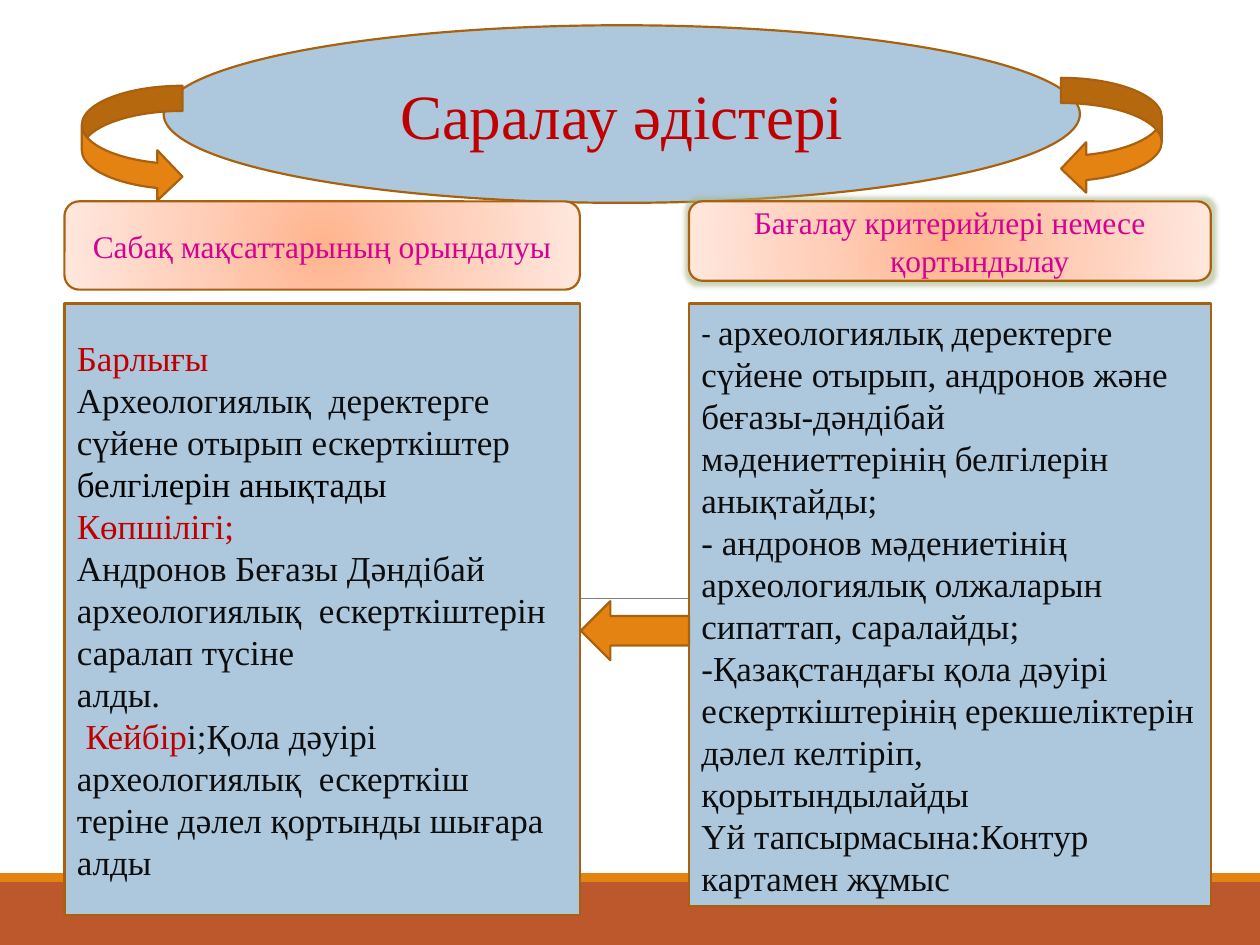
import dataclasses

import lxml.etree
import pptx
import pptx.dml.color
import pptx.enum.shapes
import pptx.enum.text
import pptx.oxml
import pptx.oxml.ns
import pptx.util

Cm = pptx.util.Cm
Pt = pptx.util.Pt
Shapes = pptx.enum.shapes.MSO_SHAPE
Align = pptx.enum.text.PP_ALIGN


@dataclasses.dataclass(frozen=True)
class Theme:
    """Colours, fonts and type sizes of the slide."""
    panel: str = "ADC8DD"
    outline: str = "A9610D"
    arrow: str = "E48312"
    band: str = "BD582C"
    rule: str = "808080"
    accent: str = "C00000"
    heading: str = "D60093"
    ink: str = "0D0D0D"
    black: str = "000000"
    glow: str = "A9B88A"
    gradient: tuple = ((0, "FFB48E"), (50, "FFCFBA"), (100, "FFE7DD"))
    font: str = "Times New Roman"
    dash_font: str = "Calibri"
    title_size: int = 36
    body_size: int = 20
    heading_size: int = 18


THEME = Theme()

LEFT_TEXT = [
    [("Барлығы", THEME.accent)],
    [("Археологиялық  деректерге сүйене отырып ескерткіштер ", THEME.ink),
     ("белгілерін анықтады", THEME.black)],
    [("Көпшілігі;", THEME.accent)],
    [("Андронов Беғазы Дәндібай археологиялық  ескерткіштерін саралап түсіне", THEME.ink)],
    [("алды.", THEME.ink)],
    [(" Кейбір", THEME.accent),
     ("і;Қола дәуірі археологиялық  ескерткіш теріне дәлел қортынды шығара алды", THEME.ink)],
]
RIGHT_TEXT = [
    [("- ", THEME.ink),
     ("археологиялық деректерге сүйене отырып, андронов және беғазы-дәндібай "
      "мәдениеттерінің белгілерін анықтайды;", THEME.ink)],
    [("- андронов мәдениетінің археологиялық олжаларын сипаттап, саралайды;", THEME.ink)],
    [("-Қазақстандағы қола дәуірі ескерткіштерінің ерекшеліктерін дәлел келтіріп, "
      "қорытындылайды", THEME.ink)],
    [("Үй тапсырмасына:Контур картамен жұмыс", THEME.ink)],
]


def rgb(value):
    """Turn a hex string into a colour."""
    return pptx.dml.color.RGBColor.from_string(value)


def add_block(slide, kind, box, fill, outline=THEME.outline):
    """Add a flat preset shape in a box given in centimetres."""
    shape = slide.shapes.add_shape(kind, *map(Cm, box))
    shape.shadow.inherit = False
    shape.fill.solid()
    shape.fill.fore_color.rgb = rgb(fill)
    if outline:
        shape.line.color.rgb = rgb(outline)
        shape.line.width = Pt(1.25)
    else:
        shape.line.fill.background()
    return shape


def write_text(shape, paragraphs, size, alignment):
    """Fill a shape with paragraphs made of (text, colour) runs."""
    frame = shape.text_frame
    frame.word_wrap = True
    frame.vertical_anchor = pptx.enum.text.MSO_ANCHOR.MIDDLE
    for index, runs in enumerate(paragraphs):
        paragraph = frame.paragraphs[0] if index == 0 else frame.add_paragraph()
        paragraph.alignment = alignment
        paragraph.font.name = THEME.font
        paragraph.font.size = Pt(size)
        for text, colour in runs:
            run = paragraph.add_run()
            run.text = text
            run.font.name = THEME.font
            run.font.size = Pt(size)
            run.font.color.rgb = rgb(colour)
    return frame


def set_radial_gradient(shape):
    """Replace the solid fill with a gradient that spreads from the centre."""
    stops = "".join(
        f'<a:gs pos="{position * 1000}"><a:srgbClr val="{colour}"/></a:gs>'
        for position, colour in THEME.gradient)
    gradient = pptx.oxml.parse_xml(
        f'<a:gradFill {pptx.oxml.ns.nsdecls("a")} rotWithShape="1"><a:gsLst>{stops}</a:gsLst>'
        '<a:path path="circle"><a:fillToRect l="50000" t="50000" r="50000" b="50000"/></a:path>'
        '</a:gradFill>')
    properties = shape._element.spPr
    properties.replace(properties.find(pptx.oxml.ns.qn("a:solidFill")), gradient)


def add_glow(shape):
    """Put a soft glow around a shape."""
    effects = shape._element.spPr.find(pptx.oxml.ns.qn("a:effectLst"))
    effects.append(pptx.oxml.parse_xml(
        f'<a:glow {pptx.oxml.ns.nsdecls("a")} rad="63500"><a:srgbClr val="{THEME.glow}">'
        '<a:alpha val="60000"/></a:srgbClr></a:glow>'))


def add_footer(slide, box):
    """Draw the band along the bottom with its thin strip on top."""
    left, top, width, height = box
    strip = 0.18
    add_block(slide, Shapes.RECTANGLE, (left, top + strip, width, height - strip),
              THEME.band, None)
    add_block(slide, Shapes.RECTANGLE, (left, top, width, strip), THEME.arrow, None)


def add_rule(slide, box):
    """Draw the thin horizontal rule behind the columns."""
    left, top, width, height = box
    rule = slide.shapes.add_connector(
        pptx.enum.shapes.MSO_CONNECTOR.STRAIGHT,
        *map(Cm, (left, top, left + width, top + height)))
    rule.line.color.rgb = rgb(THEME.rule)
    rule.line.width = Pt(0.5)
    lxml.etree.SubElement(rule._element.spPr, pptx.oxml.ns.qn("a:effectLst"))


def add_title(slide, box):
    """Draw the ellipse and set the title over it."""
    add_block(slide, Shapes.OVAL, box, THEME.panel)
    title = slide.shapes.title
    title.left, title.top, title.width, title.height = map(Cm, box)
    write_text(title, [[("Саралау әдістері", THEME.accent)]], THEME.title_size, Align.CENTER)
    slide.shapes._spTree.append(title._element)


def add_column(slide, box, heading_height, heading, body):
    """Draw a gradient heading with a text panel below it."""
    left, top, width, height = box
    offset = 2.06
    panel = add_block(slide, Shapes.RECTANGLE,
                      (left, top + offset, width, height - offset), THEME.panel)
    body_frame = write_text(panel, body, THEME.body_size, Align.LEFT)
    label = add_block(slide, Shapes.ROUNDED_RECTANGLE,
                      (left, top, width, heading_height), THEME.panel)
    set_radial_gradient(label)
    lines = [[(line, THEME.heading)] for line in heading]
    write_text(label, lines, THEME.heading_size, Align.CENTER)
    return label, body_frame


def add_arrows(slide, box):
    """Place the two curved arrows and the arrow between the columns."""
    left, top, width, height = box
    curve_width, curve_height = 2.03, 2.34
    add_block(slide, Shapes.LEFT_ARROW, (left + 10.06, top + 10.55, 2.18, 1.19), THEME.arrow)
    add_block(slide, Shapes.CURVED_RIGHT_ARROW,
              (left, top + 0.16, curve_width, curve_height), THEME.arrow)
    add_block(slide, Shapes.CURVED_LEFT_ARROW,
              (left + width - curve_width, top, curve_width, curve_height), THEME.arrow)


def build_slide(presentation):
    """Compose the whole slide."""
    slide = presentation.slides.add_slide(presentation.slide_layouts[5])
    add_footer(slide, (0, 17.6, 25.4, 1.45))
    add_rule(slide, (2.51, 12.07, 20.58, 0))
    add_title(slide, (3.3, 0.51, 18.47, 3.58))
    add_column(slide, (1.3, 4.06, 10.39, 14.38), 1.78,
               ["Сабақ мақсаттарының орындалуы"], LEFT_TEXT)
    label, body_frame = add_column(slide, (13.89, 4.06, 10.52, 14.2), 1.6,
                                   ["Бағалау критерийлері немесе", "қортындылау"], RIGHT_TEXT)
    add_glow(label)
    label.text_frame.paragraphs[1]._p.get_or_add_pPr().set("marL", str(Cm(1.2)))
    dash = body_frame.paragraphs[0].runs[0]
    dash.font.name = THEME.dash_font
    dash.font.size = Pt(THEME.heading_size)
    add_arrows(slide, (1.65, 1.57, 21.77, 11.74))


def main():
    """Create and save the presentation."""
    presentation = pptx.Presentation()
    presentation.slide_width, presentation.slide_height = Cm(25.4), Cm(19.05)
    build_slide(presentation)
    presentation.save("out.pptx")


if __name__ == "__main__":
    main()
